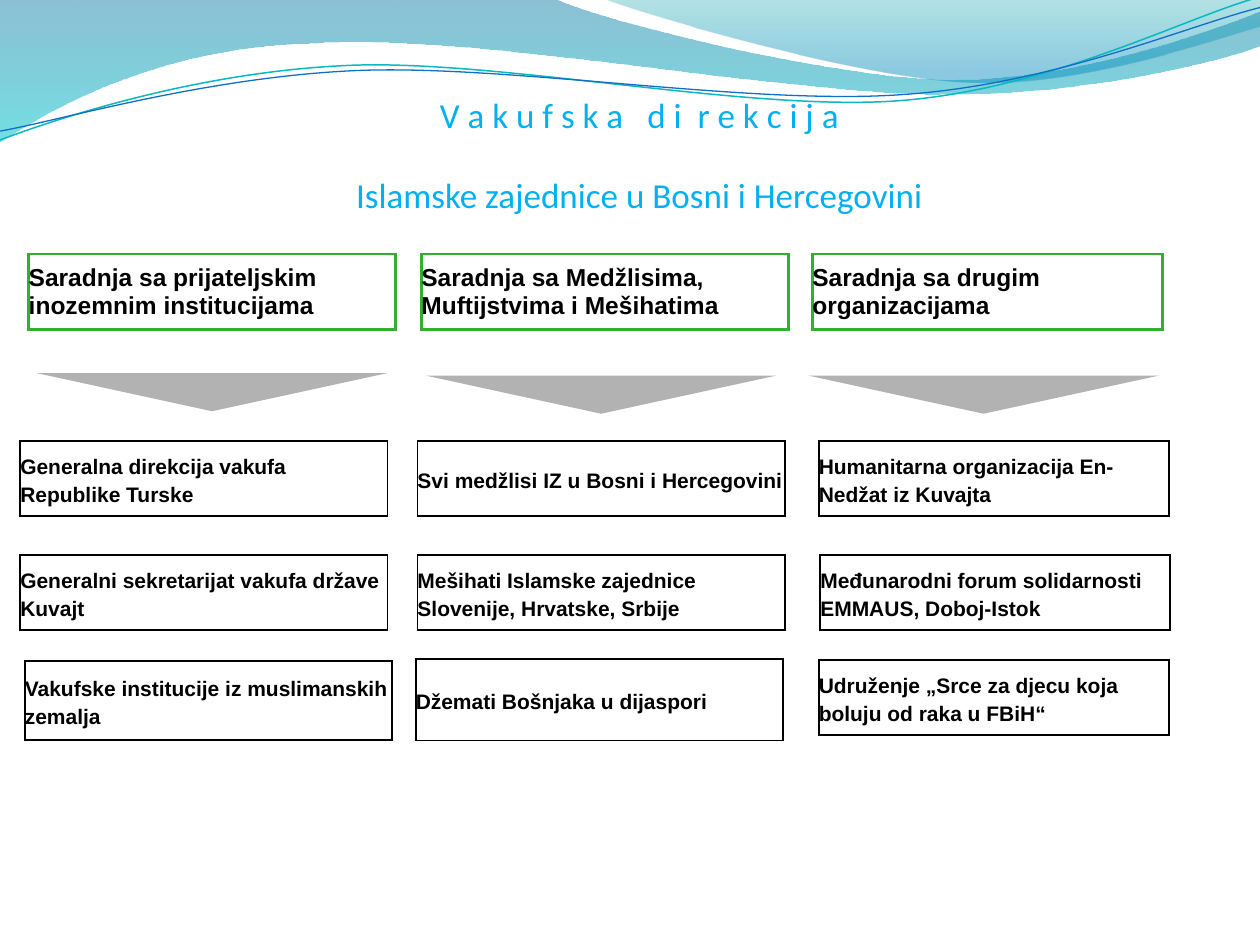
import pptx
import pptx.util
import pptx.dml.color
import pptx.enum.shapes
import pptx.enum.text
import pptx.oxml
import pptx.oxml.ns

Pt = pptx.util.Pt
qn = pptx.oxml.ns.qn
COLORS = {"title": "00B0F0", "text": "000000", "border": "000000",
          "heading": "33AE33", "arrow": "B2B2B2",
          "deep": "0074A1", "aqua": "00C6CF", "teal": "00A1A9",
          "sky": "008BBF", "teal_line": "0AB8BF", "blue_line": "0F6FC6"}


def rgb(name):
    return pptx.dml.color.RGBColor.from_string(COLORS[name])


def drawing_element(tag, attributes=""):
    return pptx.oxml.parse_xml(f'<a:{tag} {pptx.oxml.ns.nsdecls("a")} {attributes}/>')


class SlideBuilder:
    def __init__(self, slide, body_font="Arial", title_font="Calibri"):
        self.slide = slide
        self.body_font = body_font
        self.title_font = title_font

    def outline(self, start, segments, close):
        """Draw segments of one point (a line) or three points (a cubic curve)."""
        points = [(Pt(x), Pt(y)) for segment in segments for x, y in segment]
        builder = self.slide.shapes.build_freeform(Pt(start[0]), Pt(start[1]))
        builder.add_line_segments(points, close=close)
        shape = builder.convert_to_shape()
        shape.shadow.inherit = False
        steps = iter(list(shape._element.iter(qn("a:lnTo"))))
        for segment in segments:
            group = [next(steps) for _ in segment]
            if len(group) == 3:
                curve = drawing_element("cubicBezTo")
                group[0].addprevious(curve)
                for step in group:
                    curve.append(step[0])
                    step.getparent().remove(step)
        return shape

    def wave(self, start, segments, stops):
        wave = self.outline(start, segments, True)
        wave.line.fill.background()
        wave.fill.gradient()
        wave.fill.gradient_angle = 270
        for stop, (position, color, alpha) in zip(wave.fill.gradient_stops, stops):
            stop.position = position
            stop.color.rgb = rgb(color)
        colors = wave._element.spPr.iter(qn("a:srgbClr"))
        for element, (position, color, alpha) in zip(colors, stops):
            element.append(drawing_element("alpha", f'val="{alpha * 1000}"'))

    def wave_line(self, start, segments, color, width):
        line = self.outline(start, segments, False)
        line.fill.background()
        line.line.color.rgb = rgb(color)
        line.line.width = Pt(width)

    def title(self, lines, x, y, w, h):
        """Each line is a list of (text, letter spacing in points) runs."""
        title = self.slide.shapes.title
        title.left, title.top, title.width, title.height = map(Pt, (x, y, w, h))
        frame = title.text_frame
        frame.word_wrap = True
        frame.auto_size = pptx.enum.text.MSO_AUTO_SIZE.NONE
        frame.vertical_anchor = pptx.enum.text.MSO_ANCHOR.BOTTOM
        frame.margin_left = frame.margin_right = 0
        for i, line in enumerate(lines):
            paragraph = frame.add_paragraph() if i else frame.paragraphs[0]
            paragraph.alignment = pptx.enum.text.PP_ALIGN.CENTER
            paragraph.line_spacing = 0.95
            paragraph.space_before = Pt(23 if i else 0)
            for text, spacing in line:
                run = paragraph.add_run()
                run.text = text
                run.font.size = Pt(20)
                run.font.name = self.title_font
                run.font.color.rgb = rgb("title")
                if spacing:
                    run.font._element.set("spc", str(int(spacing * 100)))

    def preset(self, kind, x, y, w, h):
        shape = self.slide.shapes.add_shape(kind, *map(Pt, (x, y, w, h)))
        shape.shadow.inherit = False
        return shape

    def box(self, text, x, y, w, h, size=12, border="border", width=1):
        box = self.preset(pptx.enum.shapes.MSO_SHAPE.RECTANGLE, x, y, w, h)
        box.fill.background()
        box.line.color.rgb = rgb(border)
        box.line.width = Pt(width)
        box._element.spPr.find(qn("a:ln")).append(drawing_element("miter", 'lim="800000"'))
        frame = box.text_frame
        frame.text = text
        frame.word_wrap = True
        frame.vertical_anchor = pptx.enum.text.MSO_ANCHOR.MIDDLE
        frame.margin_left = frame.margin_right = frame.margin_top = frame.margin_bottom = 0
        paragraph = frame.paragraphs[0]
        paragraph.alignment = pptx.enum.text.PP_ALIGN.LEFT
        paragraph.line_spacing = Pt(16)
        font = paragraph.runs[0].font
        font.size, font.bold, font.name = Pt(size), True, self.body_font
        font.color.rgb = rgb("text")

    def arrow(self, x, y):
        arrow = self.preset(pptx.enum.shapes.MSO_SHAPE.FLOWCHART_MERGE, x, y, 200.4, 21.8)
        arrow.fill.solid()
        arrow.fill.fore_color.rgb = rgb("arrow")
        arrow.line.fill.background()


# Each column: width, heading (text, x), arrow (x, y), items (text, x, y, height)
COLUMNS = [
    (209.8, ("Saradnja sa prijateljskim inozemnim institucijama", 16.4), (21, 213.2), [
        ("Generalna direkcija vakufa Republike Turske", 11.6, 251.8, 43),
        ("Generalni sekretarijat vakufa države Kuvajt", 11.6, 317, 43),
        ("Vakufske institucije iz muslimanskih zemalja", 14.2, 377.8, 45)]),
    (210, ("Saradnja sa Medžlisima, Muftijstvima i Mešihatima", 240.8), (243.3, 214.6), [
        ("Svi medžlisi IZ u Bosni i Hercegovini", 238.6, 251.8, 43),
        ("Mešihati Islamske zajednice Slovenije, Hrvatske, Srbije", 238.6, 317, 43),
        ("Džemati Bošnjaka u dijaspori", 237.6, 376.6, 46.6)]),
    (200, ("Saradnja sa drugim organizacijama", 464.2), (461.9, 214.6), [
        ("Humanitarna organizacija En-Nedžat iz Kuvajta", 467.9, 251.8, 43),
        ("Međunarodni forum solidarnosti EMMAUS, Doboj-Istok", 468.8, 317, 43),
        ("Udruženje „Srce za djecu koja boluju od raka u FBiH“", 467.9, 377.2, 43)]),
]


def main():
    deck = pptx.Presentation()
    deck.slide_width, deck.slide_height = Pt(720), Pt(540)
    builder = SlideBuilder(deck.slides.add_slide(deck.slide_layouts[5]))

    # Wave decoration
    builder.wave((0, 0), [
        [(317, -0.7)],
        [(343, 12), (478, 45.4), (546, 45.4)],
        [(614, 45.4), (690, 18.7), (720, 6.5)],
        [(720.7, 26)],
        [(708, 31.7), (626, 54.7), (537, 54)],
        [(448, 54), (275, 20.2), (185, 24.5)],
        [(93, 26), (33, 60), (-0.7, 81.4)]], [(0, "deep", 45), (1, "aqua", 55)])
    builder.wave((345, -0.7), [
        [(366.5, 8), (491, 44.6), (553.7, 46.8)],
        [(616, 49.7), (692, 23), (720, 15)],
        [(720, 0)]], [(0, "teal", 30), (0.8, "sky", 45)])
    builder.wave_line((0, 80), [
        [(34.6, 67), (113.8, 41), (199.4, 37.4)],
        [(284.4, 33.8), (427, 64), (513.4, 57.6)],
        [(599.8, 51), (675.4, 10.8), (718.6, -1.4)]], "teal_line", 0.85)
    builder.wave_line((0, 74.9), [
        [(33.8, 69), (118, 44), (203.8, 40.3)],
        [(290.2, 36.7), (429.8, 60.5), (516.2, 54)],
        [(602, 48.2), (677.5, 15), (720, 4.3)]], "blue_line", 0.75)

    # Title, with wider spaces between the words of its letter-spaced first line
    builder.title([
        [("V a k u f s k a", 0), (" ", 9), ("d i", 0), (" ", 4.5), ("r e k c i j a", 0)],
        [("Islamske zajednice u Bosni i Hercegovini", 0)]], 59, 41, 612.7, 86.4)

    # Cooperation columns
    for width, (heading, heading_x), arrow, items in COLUMNS:
        builder.box(heading, heading_x, 145.2, width, 43, 14, "heading", 1.5)
        builder.arrow(*arrow)
        for text, x, y, height in items:
            builder.box(text, x, y, width, height)

    deck.save("out.pptx")


if __name__ == "__main__":
    main()
